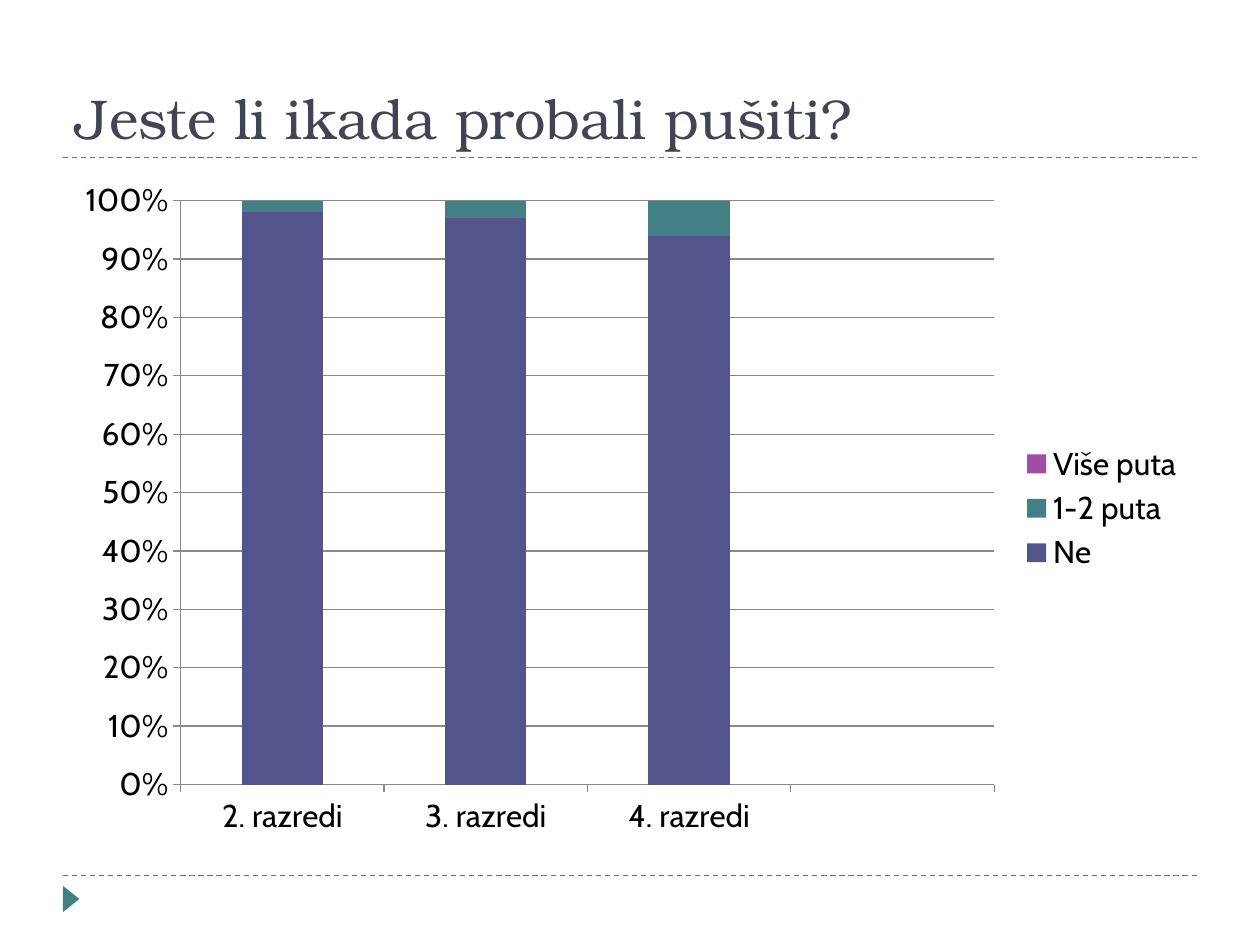
from dataclasses import dataclass

from lxml import etree
from pptx import Presentation
from pptx.chart.data import CategoryChartData
from pptx.dml.color import RGBColor
from pptx.enum import chart as ch, dml, shapes, text
from pptx.oxml.ns import qn
from pptx.util import Pt


@dataclass(frozen=True)
class Theme:
    heading_font: str = "TeX Gyre Bonum"
    body_font: str = "Cabin"
    heading_size: int = 32
    chart_size: int = 18
    heading: str = "424456"
    body: str = "000000"
    accent: str = "438086"
    axis: str = "888888"
    series: tuple = ("53548A", "438086", "A04DA3")


def rgb(value):
    return RGBColor.from_string(value)


class SlideBuilder:
    def __init__(self, slide, theme):
        self.slide = slide
        self.theme = theme

    def style_font(self, font, name, size, color):
        font.name = name
        font.size = Pt(size)
        font.color.rgb = rgb(color)

    def title(self, wording, left, top, width, height):
        heading = self.slide.shapes.title
        heading.left, heading.top = Pt(left), Pt(top)
        heading.width, heading.height = Pt(width), Pt(height)
        frame = heading.text_frame
        frame.text = wording
        frame.word_wrap = True
        frame.auto_size = text.MSO_AUTO_SIZE.NONE
        frame.vertical_anchor = text.MSO_ANCHOR.BOTTOM
        paragraph = frame.paragraphs[0]
        paragraph.alignment = text.PP_ALIGN.LEFT
        self.style_font(paragraph.font, self.theme.heading_font,
                        self.theme.heading_size, self.theme.heading)

    def dashed_rule(self, left, right, y):
        rule = self.slide.shapes.add_connector(
            shapes.MSO_CONNECTOR.STRAIGHT, Pt(left), Pt(y), Pt(right), Pt(y))
        rule.line.color.rgb = rgb(self.theme.accent)
        rule.line.width = Pt(0.75)
        rule.line.dash_style = dml.MSO_LINE.DASH
        etree.SubElement(rule._element.spPr, qn("a:effectLst"))

    def page_marker(self, left, top, width, height):
        """Add a small triangle turned to point right."""
        marker = self.slide.shapes.add_shape(
            shapes.MSO_SHAPE.ISOSCELES_TRIANGLE,
            Pt(left), Pt(top), Pt(width), Pt(height))
        marker.rotation = 90
        marker.shadow.inherit = False
        marker.fill.solid()
        marker.fill.fore_color.rgb = rgb(self.theme.accent)
        marker.line.fill.background()

    def stacked_chart(self, categories, answers, left, top, width, height):
        data = CategoryChartData()
        data.categories = categories
        for answer, shares in answers.items():
            data.add_series(answer, shares)
        chart = self.slide.shapes.add_chart(
            ch.XL_CHART_TYPE.COLUMN_STACKED_100,
            Pt(left), Pt(top), Pt(width), Pt(height), data).chart
        chart.has_title = False
        self.style_font(chart.font, self.theme.body_font,
                        self.theme.chart_size, self.theme.body)
        chart.has_legend = True
        chart.legend.position = ch.XL_LEGEND_POSITION.RIGHT
        chart.legend.include_in_layout = False

        plot = chart.plots[0]
        plot.vary_by_categories = False
        plot.gap_width = 150
        plot.overlap = 100
        for series, color in zip(plot.series, self.theme.series):
            series.format.fill.solid()
            series.format.fill.fore_color.rgb = rgb(color)

        share_axis = chart.value_axis
        share_axis.minimum_scale = 0
        share_axis.has_major_gridlines = True
        share_axis.tick_labels.number_format = "0%"
        share_axis.tick_labels.number_format_is_linked = False
        for axis in (chart.category_axis, share_axis):
            axis.major_tick_mark = ch.XL_TICK_MARK.OUTSIDE
        for part in (chart.category_axis, share_axis, share_axis.major_gridlines):
            part.format.line.color.rgb = rgb(self.theme.axis)
            part.format.line.width = Pt(0.75)


def main():
    deck = Presentation()
    deck.slide_width, deck.slide_height = Pt(720), Pt(540)
    title_only = deck.slide_layouts[5]
    builder = SlideBuilder(deck.slides.add_slide(title_only), Theme())

    margin, content_width = 36, 648
    for y in (500.4, 90):
        builder.dashed_rule(margin, margin + content_width, y)
    builder.page_marker(33.1, 509, 15.1, 9.4)
    builder.title("Jeste li ikada probali pušiti?", margin, 12, content_width, 78)
    builder.stacked_chart(
        ["2. razredi", "3. razredi", "4. razredi", ""],
        {
            "Ne": (98, 97, 94, None),
            "1-2 puta": (2, 3, 6, None),
            "Više puta": (None,) * 4,
        },
        margin, 96, content_width, 389)
    deck.save("out.pptx")


if __name__ == "__main__":
    main()
